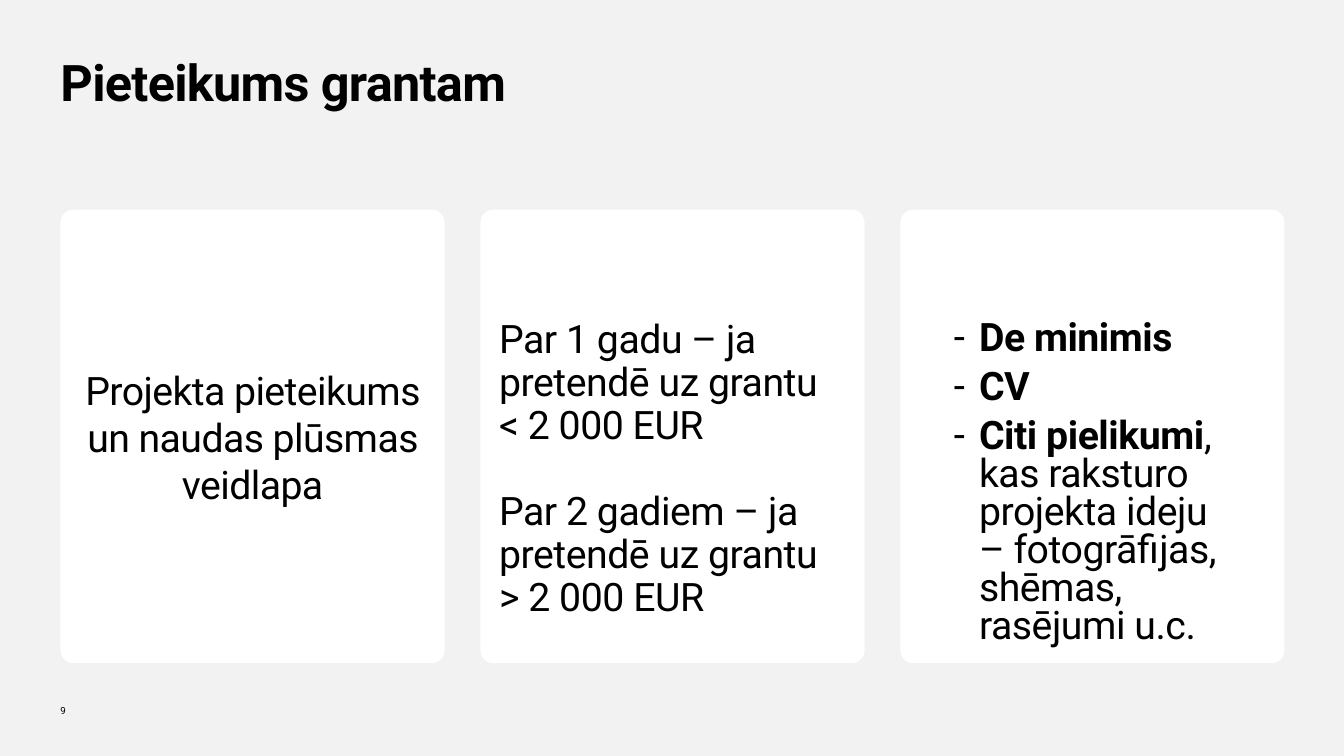
from lxml.etree import SubElement
from pptx import Presentation
from pptx.dml.color import RGBColor
from pptx.enum.shapes import MSO_SHAPE
from pptx.enum.text import MSO_ANCHOR, MSO_AUTO_SIZE, PP_ALIGN
from pptx.oxml.ns import qn
from pptx.util import Inches, Pt

BLACK = RGBColor(0x00, 0x00, 0x00)
WHITE = RGBColor(0xFF, 0xFF, 0xFF)
GREY = RGBColor(0xF2, 0xF2, 0xF2)


def add_run(para, text, size, bold=False, track=0):
    run = para.add_run()
    run.text = text
    font = run.font
    font.name = "Roboto"
    font.size = Pt(size)
    font.bold = bold
    font.color.rgb = BLACK
    if track:
        font._element.set("spc", str(track))


def set_box(shape, left, top, width, height, anchor):
    shape.left, shape.top = Inches(left), Inches(top)
    shape.width, shape.height = Inches(width), Inches(height)
    frame = shape.text_frame
    frame.margin_left = frame.margin_right = 0
    frame.margin_top = frame.margin_bottom = 0
    frame.vertical_anchor = anchor
    frame.auto_size = MSO_AUTO_SIZE.NONE
    frame.word_wrap = True
    return frame


deck = Presentation()
deck.slide_width = Inches(13.33)
deck.slide_height = Inches(7.5)
slide = deck.slides.add_slide(deck.slide_layouts[1])
slide.background.fill.solid()
slide.background.fill.fore_color.rgb = GREY
shapes = slide.shapes

title = set_box(shapes.title, 0.6, 0.51, 12.13, 1.15, MSO_ANCHOR.TOP)
para = title.paragraphs[0]
para.alignment = PP_ALIGN.LEFT
add_run(para, "Pieteikums grantam", 36, True, -50)

number = set_box(shapes.add_textbox(0, 0, 0, 0), 0.6, 6.99, 0.12, 0.12, MSO_ANCHOR.BOTTOM)
number.word_wrap = False
add_run(number.paragraphs[0], "9", 7)

cards = []
for col in range(3):
    card = shapes.add_shape(
        MSO_SHAPE.ROUNDED_RECTANGLE,
        Inches(0.6 + 4.165 * col), Inches(2.08), Inches(3.81), Inches(4.5),
    )
    card.adjustments[0] = 0.034
    card.shadow.inherit = False
    card.fill.solid()
    card.fill.fore_color.rgb = WHITE
    card.line.fill.background()
    cards.append(card)

form = cards[0].text_frame
form.word_wrap = True
form.vertical_anchor = MSO_ANCHOR.MIDDLE
para = form.paragraphs[0]
para.alignment = PP_ALIGN.CENTER
add_run(para, "Projekta pieteikums un naudas plūsmas veidlapa", 28, track=-40)

terms = set_box(shapes.add_textbox(0, 0, 0, 0), 4.95, 3.1, 3.42, 3.04, MSO_ANCHOR.BOTTOM)
lines = [
    "Par 1 gadu – ja pretendē uz grantu < 2 000 EUR",
    "Par 2 gadiem – ja pretendē uz grantu > 2 000 EUR",
]
for i, text in enumerate(lines):
    para = terms.add_paragraph() if i else terms.paragraphs[0]
    para.line_spacing = Pt(30.6)
    para.space_before = Pt(30.6 if i else 0)
    add_run(para, text, 28, track=-30)

body = slide.placeholders[1]
shapes._spTree.append(body._element)
extras = set_box(body, 9.45, 3.16, 2.75, 3.26, MSO_ANCHOR.BOTTOM)
items = [
    ("De minimis", ""),
    ("CV", ""),
    ("Citi pielikumi", ", kas raksturo projekta ideju – fotogrāfijas, shēmas, rasējumi u.c."),
]
for i, (name, rest) in enumerate(items):
    para = extras.add_paragraph() if i else extras.paragraphs[0]
    props = para._p.get_or_add_pPr()
    props.set("marL", str(Inches(0.26)))
    props.set("indent", str(-Inches(0.26)))
    SubElement(props, qn("a:buChar")).set("char", "-")
    para.line_spacing = Pt(27.1)
    para.space_before = Pt(8 if i else 0)
    add_run(para, name, 28, True, -30)
    if rest:
        add_run(para, rest, 28, track=-30)

deck.save("out.pptx")
